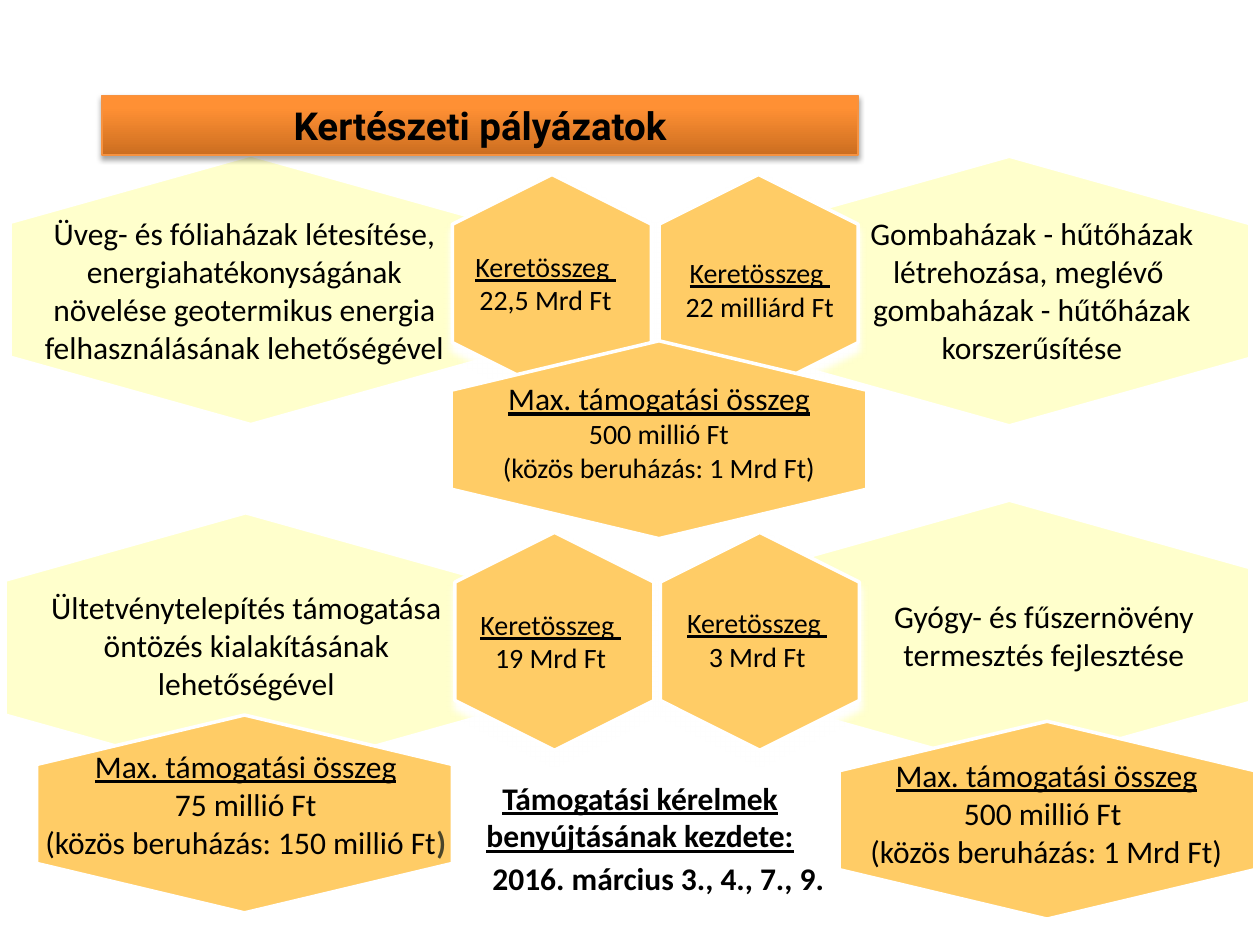
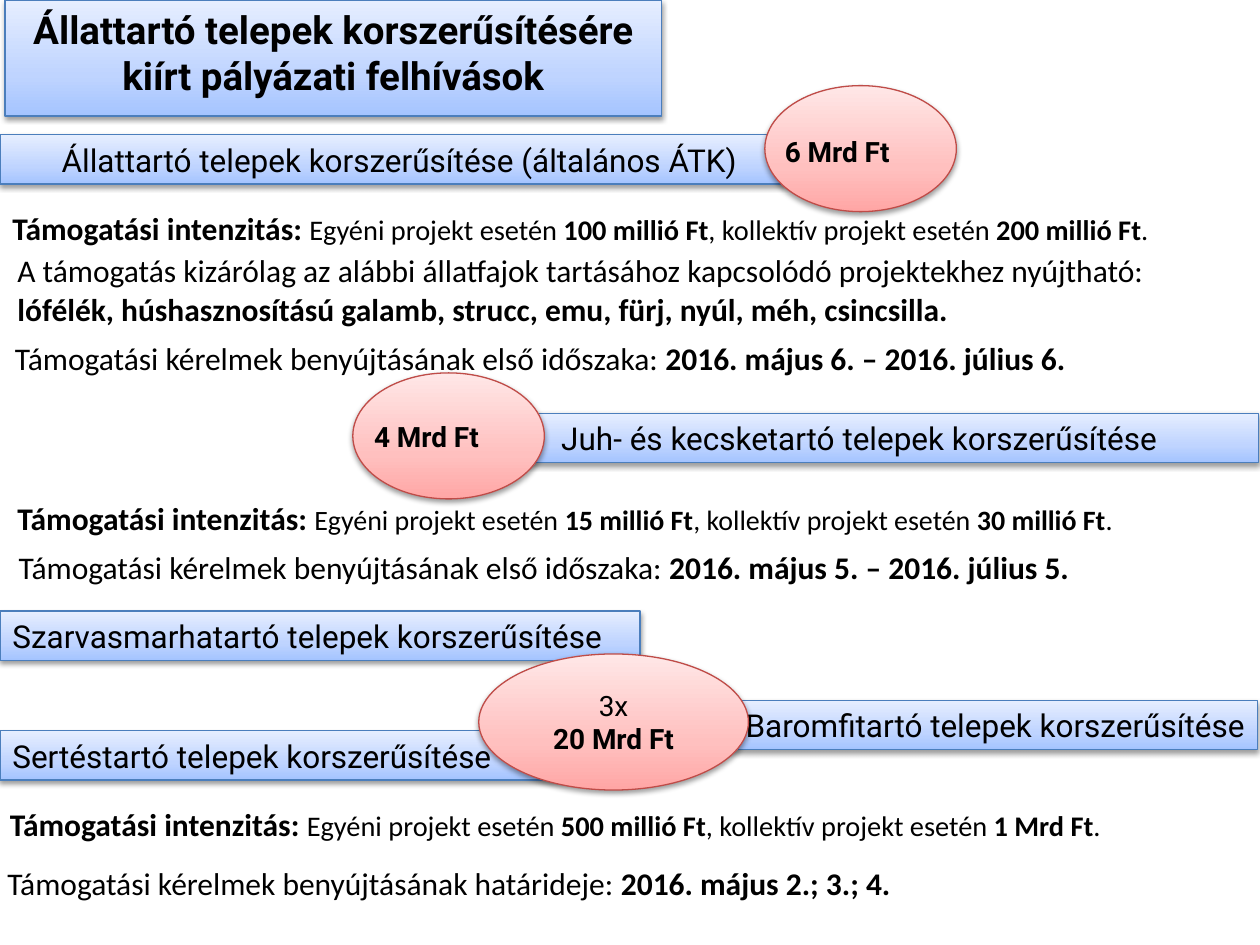
import dataclasses

import lxml.etree
import pptx
import pptx.dml.color
import pptx.enum.shapes
import pptx.enum.text
import pptx.oxml.ns
import pptx.util

Inches, Pt = pptx.util.Inches, pptx.util.Pt
SHAPE = pptx.enum.shapes.MSO_SHAPE
ALIGN = pptx.enum.text.PP_ALIGN
ANCHOR = pptx.enum.text.MSO_ANCHOR
AUTO = pptx.enum.text.MSO_AUTO_SIZE
qn = pptx.oxml.ns.qn

BODY_FONT, BAND_FONT = "Calibri", "Roboto"
YELLOW, AMBER, WHITE = "FFFFCC", "FFCC66", "FFFFFF"


@dataclasses.dataclass
class Look:
    """Gradient stops run from bottom to top; shadow is colour, alpha %, blur, distance."""
    stops: list
    line: str
    shadow: tuple


ORANGE = Look([(0, "CC6E20"), (80, "FF9034"), (100, "FF9136")], "F69240",
              ("000000", 35, 3.1, 1.8))
BLUE = Look([(0, "A4C4FF"), (35, "BFD4FF"), (100, "E6EEFF")], "4B7EBC",
            ("000000", 38, 3.1, 1.6))
PINK = Look([(0, "FFA6A5"), (35, "FFC0BF"), (100, "FFE7E7")], "BF4C48",
            BLUE.shadow)


@dataclasses.dataclass
class Run:
    text: str
    size: float = 18
    bold: bool = False
    underline: bool = False
    color: str = "000000"


def rgb(value):
    return pptx.dml.color.RGBColor.from_string(value)


def add_color(parent, value):
    return lxml.etree.SubElement(parent, qn("a:srgbClr"), val=value)


class Deck:
    def __init__(self):
        self.prs = pptx.Presentation()
        self.prs.slide_width, self.prs.slide_height = Inches(10), Inches(7.5)

    def new_slide(self):
        self.s = self.prs.slides.add_slide(self.prs.slide_layouts[5])

    def add_paragraphs(self, tf, paragraphs, align, font):
        for i, runs in enumerate(paragraphs):
            p = tf.paragraphs[0] if i == 0 else tf.add_paragraph()
            p.alignment = align
            for run in runs:
                r = p.add_run()
                r.text = run.text
                r.font.name, r.font.size = font, Pt(run.size)
                r.font.bold, r.font.underline = run.bold, run.underline
                r.font.color.rgb = rgb(run.color)

    def shadow(self, sp, color, alpha, blur, distance):
        sp.shadow.inherit = False
        effects = sp._element.spPr.find(qn("a:effectLst"))
        outer = lxml.etree.SubElement(
            effects, qn("a:outerShdw"), blurRad=str(Pt(blur)),
            dist=str(Pt(distance)), dir="5400000", rotWithShape="0")
        lxml.etree.SubElement(add_color(outer, color), qn("a:alpha"), val=str(alpha * 1000))

    def dress(self, sp, look):
        """Give the shape its gradient, outline and shadow."""
        sp.fill.gradient()
        sp.fill.gradient_angle = 90
        stops = sp._element.spPr.find(qn("a:gradFill")).find(qn("a:gsLst"))
        for old in list(stops):
            stops.remove(old)
        for pos, color in look.stops:
            add_color(lxml.etree.SubElement(stops, qn("a:gs"), pos=str(pos * 1000)), color)
        sp.line.color.rgb = rgb(look.line)
        sp.line.width = Pt(0.75)
        self.shadow(sp, *look.shadow)

    def title(self, text, box, look):
        """Place the title placeholder above everything drawn so far."""
        sp = self.s.shapes.title
        sp.left, sp.top, sp.width, sp.height = map(Inches, box)
        self.dress(sp, look)
        tf = sp.text_frame
        tf.auto_size, tf.vertical_anchor = AUTO.NONE, ANCHOR.TOP
        self.add_paragraphs(tf, [[Run(text, 22, bold=True)]], ALIGN.CENTER, BAND_FONT)
        self.s.shapes._spTree.append(sp._element)

    def text(self, paragraphs, box, align=ALIGN.CENTER, wrap=True, font=BODY_FONT):
        tf = self.s.shapes.add_textbox(*map(Inches, box)).text_frame
        tf.word_wrap, tf.auto_size = wrap, AUTO.SHAPE_TO_FIT_TEXT
        self.add_paragraphs(tf, paragraphs, align, font)

    def hexagon(self, center, size, color):
        """Draw a hexagon standing on its tip; size is its unrotated frame."""
        (x, y), (w, h) = center, size
        sp = self.s.shapes.add_shape(
            SHAPE.HEXAGON, Inches(x - w / 2), Inches(y - h / 2), Inches(w), Inches(h))
        sp.rotation = 90
        sp.fill.solid()
        sp.fill.fore_color.rgb = rgb(color)
        sp.line.color.rgb = rgb(WHITE)
        sp.line.width = Pt(2)
        self.shadow(sp, WHITE, 100, 4, 4)

    def panel(self, kind, box, look, paragraphs=(), align=ALIGN.CENTER):
        sp = self.s.shapes.add_shape(kind, *map(Inches, box))
        self.dress(sp, look)
        sp.text_frame.vertical_anchor = ANCHOR.MIDDLE
        self.add_paragraphs(sp.text_frame, paragraphs, align, BAND_FONT)

    def band(self, text, box, align=ALIGN.CENTER):
        self.panel(SHAPE.RECTANGLE, box, BLUE, [[Run(text)]], align)

    def budget_oval(self, amount, left, top, label_left, label_top):
        self.panel(SHAPE.OVAL, (left, top, 1.52, 1), PINK)
        self.text([[Run(amount, 16, bold=True)]], (label_left, label_top, 1.08, 0.37),
                  ALIGN.LEFT, False, BAND_FONT)

    def line(self, runs, left, top, width, wrap=False):
        self.text([runs], (left, top, width, 0.4), ALIGN.LEFT, wrap)

    def intensity(self, single, collective, left, top, size):
        self.line([Run("Támogatási intenzitás: ", bold=True),
                   Run("Egyéni projekt esetén ", size),
                   Run(single, size, bold=True),
                   Run(", kollektív projekt esetén ", size),
                   Run(collective, size, bold=True),
                   Run(".", size)], left, top, 10, wrap=True)

    def deadline(self, label, dates, left, top, width):
        self.line([Run(f"Támogatási kérelmek benyújtásának {label}: "),
                   Run(dates, bold=True)], left, top, width)


def horticulture(d):
    d.new_slide()
    for center in [(8.01, 2.31), (1.99, 2.3), (1.95, 5.14), (8.01, 5.04)]:
        d.hexagon(center, (2.14, 3.82), YELLOW)
    budget, maximum = (1.73, 1.58), (1.57, 3.3)
    for center, size in [((6.02, 2.25), budget), ((4.38, 2.25), budget),
                         ((5.23, 3.49), maximum),
                         ((4.4, 5.09), budget), ((6.03, 5.09), budget),
                         ((8.31, 6.51), maximum), ((1.94, 6.46), maximum)]:
        d.hexagon(center, size, AMBER)
    d.title("Kertészeti pályázatok", (0.81, 0.76, 6, 0.47), ORANGE)

    topics = [
        (["Üveg- és fóliaházak létesítése, energiahatékonyságának növelése "
          "geotermikus energia felhasználásának lehetőségével"], (0.14, 1.65, 3.6, 1.31)),
        (["Gombaházak - hűtőházak létrehozása, meglévő ",
          "gombaházak - hűtőházak korszerűsítése"], (6.42, 1.65, 3.54, 1.31)),
        (["Ültetvénytelepítés támogatása öntözés kialakításának lehetőségével"],
         (0.1, 4.62, 3.71, 1.01)),
        (["Gyógy- és fűszernövény termesztés fejlesztése"], (6.73, 4.69, 3.11, 0.71)),
    ]
    for paragraphs, box in topics:
        d.text([[Run(text)] for text in paragraphs], box)

    for amount, left, top in [("22,5 Mrd Ft", 3.58, 1.93), ("22 milliárd Ft", 5.28, 1.98),
                              ("19 Mrd Ft", 3.62, 4.77), ("3 Mrd Ft", 5.26, 4.76)]:
        d.text([[Run("Keretösszeg ", 16, underline=True)], [Run(amount, 16)]],
               (left, top, 1.5, 0.64))

    joint = "(közös beruházás: 1 Mrd Ft)"
    maxima = [
        ([Run("500 millió Ft", 16)], [Run(joint, 16)], (3.5, 2.96, 3.46, 0.94), True),
        ([Run("500 millió Ft ")], [Run(joint)], (6.79, 5.95, 3.03, 1.01), False),
        ([Run("75 millió Ft")],
         [Run("(közös beruházás: 150 millió Ft"), Run(")", bold=True, color="4A452A")],
         (0.24, 5.88, 3.42, 1.01), False),
    ]
    for amount, joint_amount, box, wrap in maxima:
        d.text([[Run("Max. támogatási összeg", underline=True)], amount, joint_amount],
               box, wrap=wrap)

    d.text([[Run("Támogatási kérelmek benyújtásának kezdete:", bold=True, underline=True)]],
           (3.74, 6.13, 2.68, 0.71))
    d.line([Run("2016. március 3., 4., 7., 9.", bold=True)], 3.81, 6.77, 2.86)


def livestock(d):
    d.new_slide()
    d.title("Állattartó telepek korszerűsítésére kiírt pályázati felhívások",
            (0.04, 0, 5.21, 0.92), BLUE)

    d.band("Állattartó telepek korszerűsítése (általános ÁTK)", (0, 1.07, 6.34, 0.39))
    d.budget_oval("6 Mrd Ft", 6.07, 0.68, 6.13, 1.02)
    d.intensity("100 millió Ft", "200 millió Ft", 0, 1.61, 16.2)
    d.line([Run("A támogatás kizárólag az alábbi állatfajok tartásához kapcsolódó "
                "projektekhez nyújtható:")], 0.04, 1.94, 9.47)
    d.line([Run("lófélék, húshasznosítású galamb, strucc, emu, fürj, nyúl, méh, csincsilla.",
                bold=True)], 0.04, 2.25, 7.69)
    d.deadline("első időszaka", "2016. május 6. – 2016. július 6.", 0.02, 2.64, 8.88)

    d.band("Juh- és kecsketartó telepek korszerűsítése", (3.65, 3.28, 6.34, 0.39))
    d.budget_oval("4 Mrd Ft", 2.8, 2.96, 2.87, 3.28)
    d.intensity("15 millió Ft", "30 millió Ft", 0.04, 3.91, 16)
    d.deadline("első időszaka", "2016. május 5. – 2016. július 5.", 0.05, 4.3, 8.63)

    d.band("Szarvasmarhatartó telepek korszerűsítése", (0, 4.85, 5.08, 0.39), ALIGN.LEFT)
    d.band("Sertéstartó telepek korszerűsítése", (0, 5.8, 5.1, 0.39), ALIGN.LEFT)
    d.band("Baromfitartó telepek korszerűsítése", (5.41, 5.56, 4.57, 0.39), ALIGN.RIGHT)
    d.panel(SHAPE.OVAL, (3.8, 5.19, 2.14, 1.08), PINK,
            [[Run("3x", 16)], [Run("20 Mrd Ft", 16, bold=True)]])
    d.intensity("500 millió Ft", "1 Mrd Ft", -0.02, 6.34, 16.2)
    d.deadline("határideje", "2016. május 2.; 3.; 4.", -0.04, 6.81, 7.29)


def main():
    d = Deck()
    horticulture(d)
    livestock(d)
    d.prs.save("out.pptx")


if __name__ == "__main__":
    main()
